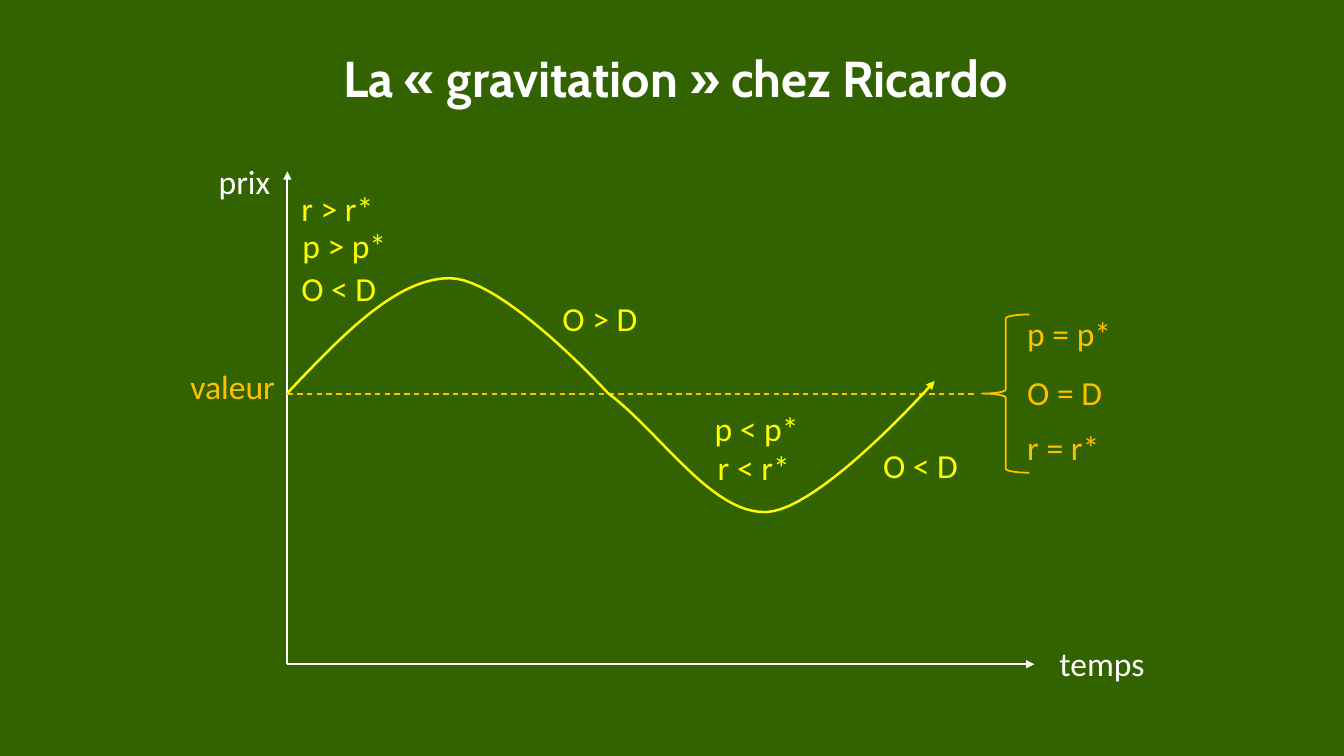
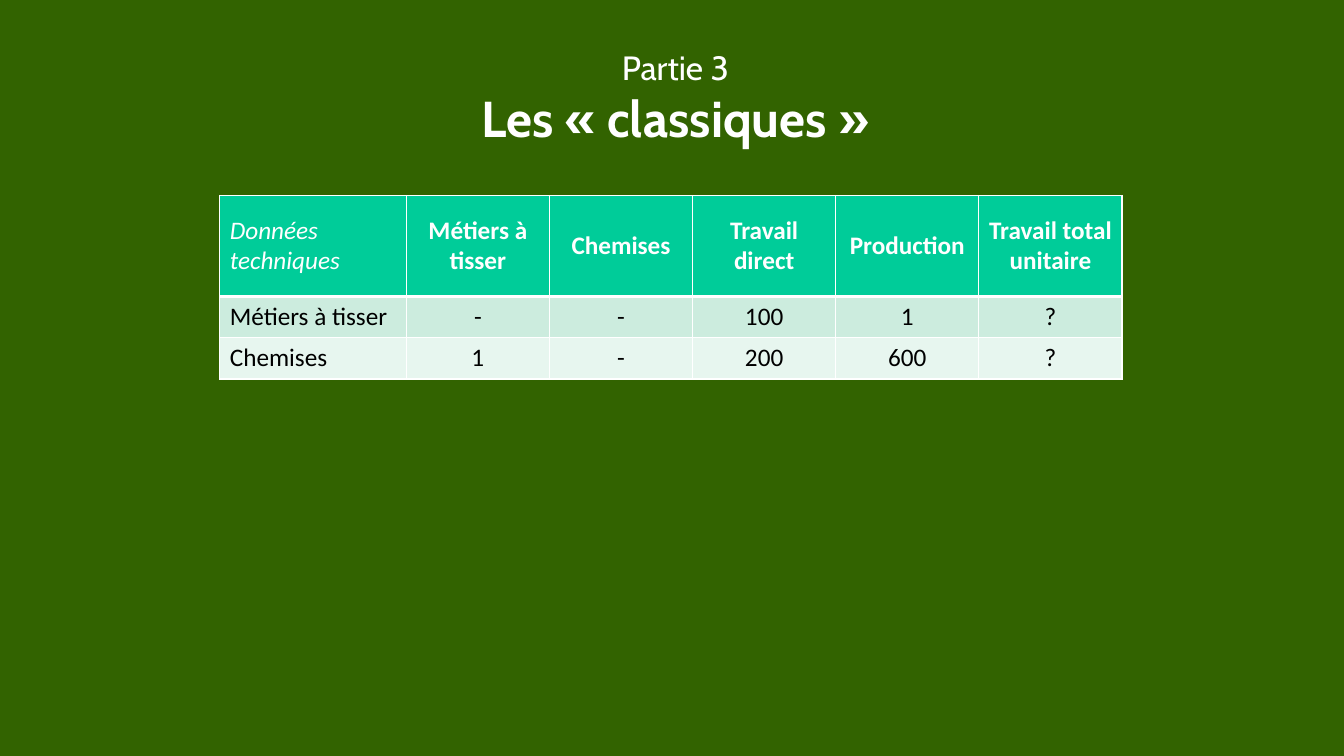
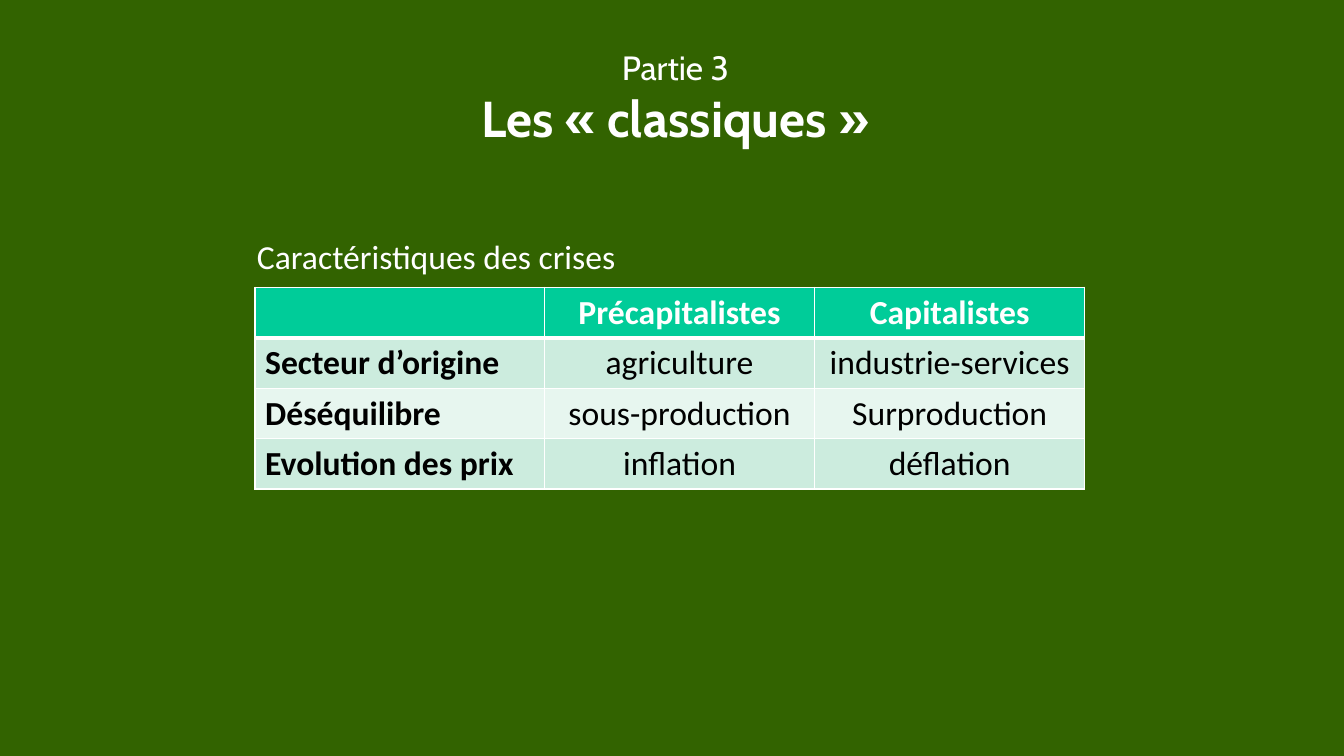
import pptx
import pptx.util
import pptx.dml.color
import pptx.enum.dml
import pptx.enum.shapes
import pptx.enum.text
import pptx.oxml
import pptx.oxml.ns

SLIDE_SIZE = 13.33, 7.5
GREEN, WHITE, BLACK = "326300", "FFFFFF", "000000"
ORANGE, YELLOW = "FFC000", "FFFF00"
HEADER_FILL, BAND_FILLS = "00CC99", ("CCECDE", "E7F6EF")
TITLE_FONT, BODY_FONT = "Cabin", "Calibri"
LABEL_HEIGHT = 0.51

GRAVITATION_TITLE = [("La « gravitation » chez Ricardo", 36, True)]
PART_TITLE = [("Partie 3", 24, False), ("Les « classiques »", 36, True)]

ORIGIN = 2.85, 6.59
AXIS_ENDS = [((2.85, 1.7), 1.25), ((10.26, 6.59), 1.5)]
VALUE_LEVEL, VALUE_END = 3.91, 9.66
EQUILIBRIUM_BRACE = 9.74, 3.12, 0.47, 1.57
PRICE_START = 2.85, 3.9
PRICE_CURVES = [
    ((3.39, 3.33), (3.93, 2.76), (4.46, 2.76)),
    ((4.99, 2.76), (6.03, 3.9), (6.03, 3.9)),
    ((6.55, 4.29), (7.06, 5.1), (7.6, 5.08)),
    ((8.14, 5.06), (9.27, 3.78), (9.27, 3.78)),
]
CURVE_STEPS = 24
DIAGRAM_LABELS = {
    WHITE: [("prix", 2.07, 1.55, 1.02), ("temps", 10.41, 6.33, 1.14)],
    ORANGE: [
        ("valeur", 1.79, 3.58, 1.73),
        ("p = p*", 10.09, 3.05, 1.3),
        ("O = D", 10.09, 3.64, 1.3),
        ("r = r*", 10.09, 4.19, 1.3),
    ],
    YELLOW: [
        ("O < D", 2.89, 2.61, 1.02),
        ("O > D", 5.48, 2.91, 1.02),
        ("O < D", 8.66, 4.36, 1.02),
        ("p > p*", 2.9, 2.18, 1.25),
        ("r > r*", 2.89, 1.81, 1.25),
        ("p < p*", 6.99, 4, 1.25),
        ("r < r*", 7.02, 4.38, 1.25),
    ],
}

TECHNICAL_DATA = [
    ("Données techniques", "Métiers à tisser", "Chemises",
     "Travail direct", "Production", "Travail total unitaire"),
    ("Métiers à tisser", "-", "-", "100", "1", "?"),
    ("Chemises", "1", "-", "200", "600", "?"),
]
CRISES = [
    ("", "Précapitalistes", "Capitalistes"),
    ("Secteur d’origine", "agriculture", "industrie-services"),
    ("Déséquilibre", "sous-production", "Surproduction"),
    ("Evolution des prix", "inflation", "déflation"),
]


def inches(*lengths):
    return [pptx.util.Inches(length) for length in lengths]


def color(value):
    return pptx.dml.color.RGBColor.from_string(value)


def format_paragraph(paragraph, size, font_name, font_color, bold=False, italic=False, centred=False):
    alignment = pptx.enum.text.PP_ALIGN
    paragraph.alignment = alignment.CENTER if centred else alignment.LEFT
    for run in paragraph.runs:
        run.font.size = pptx.util.Pt(size)
        run.font.name = font_name
        run.font.color.rgb = color(font_color)
        run.font.bold = bold
        run.font.italic = italic


def add_text(slide, text, left, top, width, height):
    text_frame = slide.shapes.add_textbox(*inches(left, top, width, height)).text_frame
    text_frame.word_wrap = True
    text_frame.auto_size = pptx.enum.text.MSO_AUTO_SIZE.SHAPE_TO_FIT_TEXT
    text_frame.text = text
    return text_frame.paragraphs


def add_label(slide, text, left, top, width, font_color):
    for paragraph in add_text(slide, text, left, top, width, LABEL_HEIGHT):
        format_paragraph(paragraph, 24, BODY_FONT, font_color)


def add_title(slide, lines):
    text = "\n".join(line[0] for line in lines)
    paragraphs = add_text(slide, text, 2.17, 0.42, 9.06, 0.71 if len(lines) == 1 else 1.1)
    for paragraph, (_, size, bold) in zip(paragraphs, lines):
        format_paragraph(paragraph, size, TITLE_FONT, WHITE, bold, centred=True)


def format_line(shape, line_color, width, arrow=False):
    shape.line.color.rgb = color(line_color)
    shape.line.width = pptx.util.Pt(width)
    if arrow:
        head = pptx.oxml.parse_xml(f'<a:tailEnd {pptx.oxml.ns.nsdecls("a")} type="triangle"/>')
        shape.line._get_or_add_ln().append(head)


def add_line(slide, start, end, line_color, width, arrow=False):
    connector = slide.shapes.add_connector(
        pptx.enum.shapes.MSO_CONNECTOR.STRAIGHT, *inches(*start, *end))
    format_line(connector, line_color, width, arrow)
    connector._element.spPr.append(
        pptx.oxml.parse_xml(f'<a:effectLst {pptx.oxml.ns.nsdecls("a")}/>'))
    return connector


def curve_points(start, curves):
    for first, second, end in curves:
        for step in range(1, CURVE_STEPS + 1):
            t = step / CURVE_STEPS
            weights = (1 - t) ** 3, 3 * t * (1 - t) ** 2, 3 * t * t * (1 - t), t ** 3
            yield tuple(
                sum(weight * value for weight, value in zip(weights, values))
                for values in zip(start, first, second, end))
        start = end


def add_price_curve(slide):
    builder = slide.shapes.build_freeform(*inches(*PRICE_START))
    points = [inches(*point) for point in curve_points(PRICE_START, PRICE_CURVES)]
    builder.add_line_segments(points, close=False)
    curve = builder.convert_to_shape()
    curve.shadow.inherit = False
    curve.fill.background()
    format_line(curve, YELLOW, 1.75, arrow=True)


def add_brace(slide):
    brace = slide.shapes.add_shape(
        pptx.enum.shapes.MSO_SHAPE.LEFT_BRACE, *inches(*EQUILIBRIUM_BRACE))
    brace.shadow.inherit = False
    brace.fill.background()
    format_line(brace, ORANGE, 1.25)


def set_borders(cell, widths):
    properties = cell._tc.get_or_add_tcPr()
    for side, width in zip("LRTB", widths):
        properties.append(pptx.oxml.parse_xml(
            f'<a:ln{side} {pptx.oxml.ns.nsdecls("a")} w="{pptx.util.Pt(width)}">'
            f'<a:solidFill><a:srgbClr val="{WHITE}"/></a:solidFill></a:ln{side}>'))


def add_table(slide, rows, left, top, column_widths, row_heights, size,
              bold_first_column=False, italic_corner=False):
    table = slide.shapes.add_table(
        len(rows), len(column_widths),
        *inches(left, top, sum(column_widths), sum(row_heights))).table
    table.first_row = table.horz_banding = False
    for column, width in zip(table.columns, inches(*column_widths)):
        column.width = width
    for row, height in zip(table.rows, inches(*row_heights)):
        row.height = height
    for row_index, texts in enumerate(rows):
        header = row_index == 0
        fill = HEADER_FILL if header else BAND_FILLS[(row_index - 1) % 2]
        for column_index, text in enumerate(texts):
            first = column_index == 0
            italic = header and first and italic_corner
            cell = table.cell(row_index, column_index)
            set_borders(cell, (1, 1, 3 if row_index == 1 else 1, 3 if header else 1))
            cell.fill.solid()
            cell.fill.fore_color.rgb = color(fill)
            if header:
                cell.vertical_anchor = pptx.enum.text.MSO_ANCHOR.MIDDLE
            cell.text = text
            bold = header and not italic or first and bold_first_column
            format_paragraph(cell.text_frame.paragraphs[0], size, BODY_FONT,
                             WHITE if header else BLACK, bold, italic, centred=not first)


def add_slide(presentation, title):
    slide = presentation.slides.add_slide(presentation.slide_layouts[6])
    add_title(slide, title)
    return slide


def build_gravitation(presentation):
    slide = add_slide(presentation, GRAVITATION_TITLE)
    for end, width in AXIS_ENDS:
        add_line(slide, ORIGIN, end, WHITE, width, arrow=True)
    value_line = add_line(
        slide, (ORIGIN[0], VALUE_LEVEL), (VALUE_END, VALUE_LEVEL), ORANGE, 1)
    value_line.line.dash_style = pptx.enum.dml.MSO_LINE.DASH
    add_brace(slide)
    add_price_curve(slide)
    for font_color, labels in DIAGRAM_LABELS.items():
        for label in labels:
            add_label(slide, *label, font_color)


def build_technical_data(presentation):
    slide = add_slide(presentation, PART_TITLE)
    add_table(slide, TECHNICAL_DATA, 2.18, 1.94, [1.85] + [1.42] * 5,
              [1] + [0.41] * 2, 18, italic_corner=True)


def build_crises(presentation):
    slide = add_slide(presentation, PART_TITLE)
    add_table(slide, CRISES, 2.53, 2.85, [2.87] + [2.68] * 2, [0.5] * 4, 24,
              bold_first_column=True)
    add_label(slide, "Caractéristiques des crises", 2.45, 2.29, 4.02, WHITE)


def main():
    presentation = pptx.Presentation()
    presentation.slide_width, presentation.slide_height = inches(*SLIDE_SIZE)
    background = presentation.slide_master.background.fill
    background.solid()
    background.fore_color.rgb = color(GREEN)
    build_gravitation(presentation)
    build_technical_data(presentation)
    build_crises(presentation)
    presentation.save("out.pptx")


if __name__ == "__main__":
    main()
